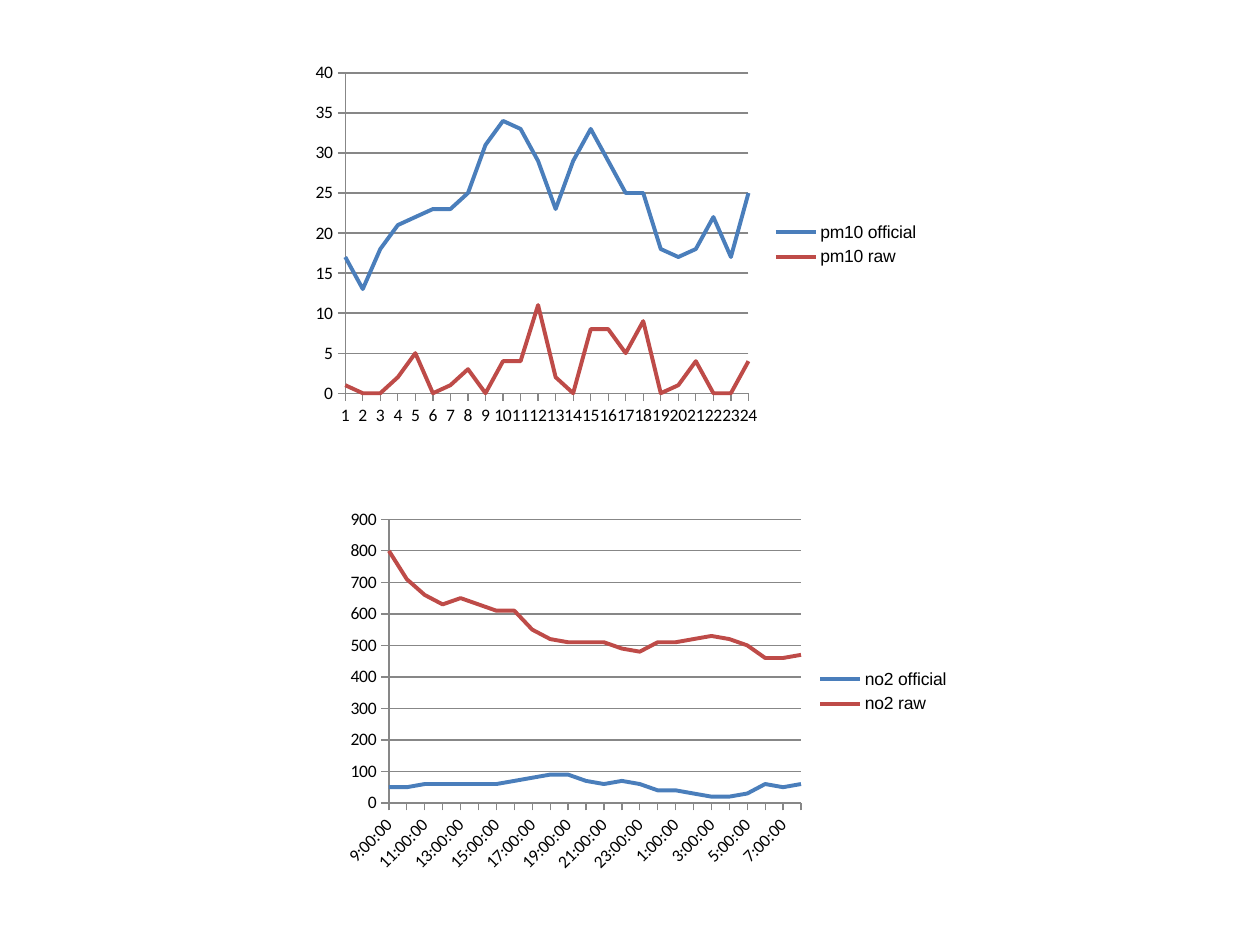
import pptx
import pptx.chart.data
import pptx.dml.color
import pptx.enum.chart
import pptx.oxml
import pptx.oxml.ns
import pptx.util
from pptx.util import Cm

COLOURS = {
    "text": "000000",
    "axis": "878787",
    "official": "4A7EBB",
    "raw": "BE4B48",
    "plot": "FFFFFF",
}
HOURS = 24


def rgb(name):
    return pptx.dml.color.RGBColor.from_string(COLOURS[name])


def chart_xml(tag, attributes="", content=""):
    return pptx.oxml.parse_xml(
        f"<c:{tag} {pptx.oxml.ns.nsdecls('c', 'a')} {attributes}>{content}</c:{tag}>"
    )


class AirQualitySlide:
    def __init__(self, slide):
        self.slide = slide
        self.axis_font = "Calibri"
        self.legend_font = "Arial"
        self.text_size = pptx.util.Pt(10)
        self.chart_width, self.chart_height = Cm(12.7), Cm(7.62)

    def style_font(self, font, typeface):
        font.name = typeface
        font.size = self.text_size
        font.color.rgb = rgb("text")

    def style_line(self, line, colour, width):
        line.color.rgb = rgb(colour)
        line.width = pptx.util.Pt(width)

    def style_axis(self, axis):
        self.style_font(axis.tick_labels.font, self.axis_font)
        self.style_line(axis.format.line, "axis", 0.75)
        axis.major_tick_mark = pptx.enum.chart.XL_TICK_MARK.OUTSIDE
        axis.minor_tick_mark = pptx.enum.chart.XL_TICK_MARK.NONE

    def place_plot(self, chart, plot_box):
        """Fix the inner plot area (left, top, width, height in the chart) and fill it."""
        area = chart.plots[0]._element.getparent()
        for old in area.findall(pptx.oxml.ns.qn("c:layout")):
            area.remove(old)
        places = '<c:layoutTarget val="inner"/><c:xMode val="edge"/><c:yMode val="edge"/>'
        wholes = (self.chart_width, self.chart_height) * 2
        for key, length, whole in zip("xywh", plot_box, wholes):
            places += f'<c:{key} val="{length / whole}"/>'
        area.insert(0, chart_xml("layout", content=f"<c:manualLayout>{places}</c:manualLayout>"))
        fill = f'<a:solidFill><a:srgbClr val="{COLOURS["plot"]}"/></a:solidFill>'
        area.append(chart_xml("spPr", content=fill))

    def line_chart(self, left, top, pollutant, hours, official, raw, limits, plot_box,
                   label_step, label_turn=0):
        readings = pptx.chart.data.CategoryChartData()
        readings.categories = hours
        readings.add_series(f"{pollutant} official", official)
        readings.add_series(f"{pollutant} raw", raw)
        chart = self.slide.shapes.add_chart(
            pptx.enum.chart.XL_CHART_TYPE.LINE, left, top,
            self.chart_width, self.chart_height, readings
        ).chart
        chart.has_title = False
        self.style_font(chart.font, self.legend_font)

        # Legend
        chart.has_legend = True
        chart.legend.position = pptx.enum.chart.XL_LEGEND_POSITION.RIGHT
        chart.legend.include_in_layout = False
        self.style_font(chart.legend.font, self.legend_font)

        # Series
        chart.plots[0].vary_by_categories = False
        for series, colour in zip(chart.plots[0].series, ("official", "raw")):
            series.smooth = False
            series.marker.style = pptx.enum.chart.XL_MARKER_STYLE.NONE
            self.style_line(series.format.line, colour, 2.25)

        # Axes
        hour_axis, level_axis = chart.category_axis, chart.value_axis
        for axis in (hour_axis, level_axis):
            self.style_axis(axis)
        level_axis.minimum_scale = 0
        level_axis.maximum_scale, level_axis.major_unit = limits
        level_axis.has_major_gridlines = True
        self.style_line(level_axis.major_gridlines.format.line, "axis", 0.75)

        # Lines start on the value axis; hour labels are spaced and turned
        level_xml, hour_xml = level_axis._element, hour_axis._element
        for old in level_xml.findall(pptx.oxml.ns.qn("c:crossBetween")):
            level_xml.remove(old)
        level_xml.find(pptx.oxml.ns.qn("c:crosses")).addnext(
            chart_xml("crossBetween", 'val="midCat"'))
        hour_xml.find(pptx.oxml.ns.qn("c:noMultiLvlLbl")).addprevious(
            chart_xml("tickLblSkip", f'val="{label_step}"'))
        if label_turn:
            body = hour_xml.find(".//" + pptx.oxml.ns.qn("a:bodyPr"))
            body.set("rot", str(label_turn * 60000))
            body.set("vert", "horz")

        self.place_plot(chart, plot_box)


def main():
    deck = pptx.Presentation()
    deck.slide_width, deck.slide_height = Cm(25.4), Cm(19.05)
    page = AirQualitySlide(deck.slides.add_slide(deck.slide_layouts[6]))

    # Particulates, by hour number
    page.line_chart(
        Cm(6.1), Cm(1.12), "pm10", [str(hour) for hour in range(1, HOURS + 1)],
        official=[17, 13, 18, 21, 22, 23, 23, 25, 31, 34, 33, 29,
                  23, 29, 33, 29, 25, 25, 18, 17, 18, 22, 17, 25],
        raw=[1, 0, 0, 2, 5, 0, 1, 3, 0, 4, 4, 11, 2, 0, 8, 8, 5, 9, 0, 1, 4, 0, 0, 4],
        limits=(40, 5), plot_box=(Cm(0.86), Cm(0.35), Cm(8.13), Cm(6.46)), label_step=1,
    )

    # Nitrogen dioxide, by clock time from nine in the morning
    page.line_chart(
        Cm(6.71), Cm(10.13), "no2", [f"{(9 + hour) % 24}:00:00" for hour in range(HOURS)],
        official=[50, 50, 60, 60, 60, 60, 60, 70, 80, 90, 90, 70,
                  60, 70, 60, 40, 40, 30, 20, 20, 30, 60, 50, 60],
        raw=[800, 710, 660, 630, 650, 630, 610, 610, 550, 520, 510, 510,
             510, 490, 480, 510, 510, 520, 530, 520, 500, 460, 460, 470],
        limits=(900, 100), plot_box=(Cm(1.13), Cm(0.34), Cm(8.31), Cm(5.72)),
        label_step=2, label_turn=-45,
    )

    deck.save("out.pptx")


if __name__ == "__main__":
    main()
